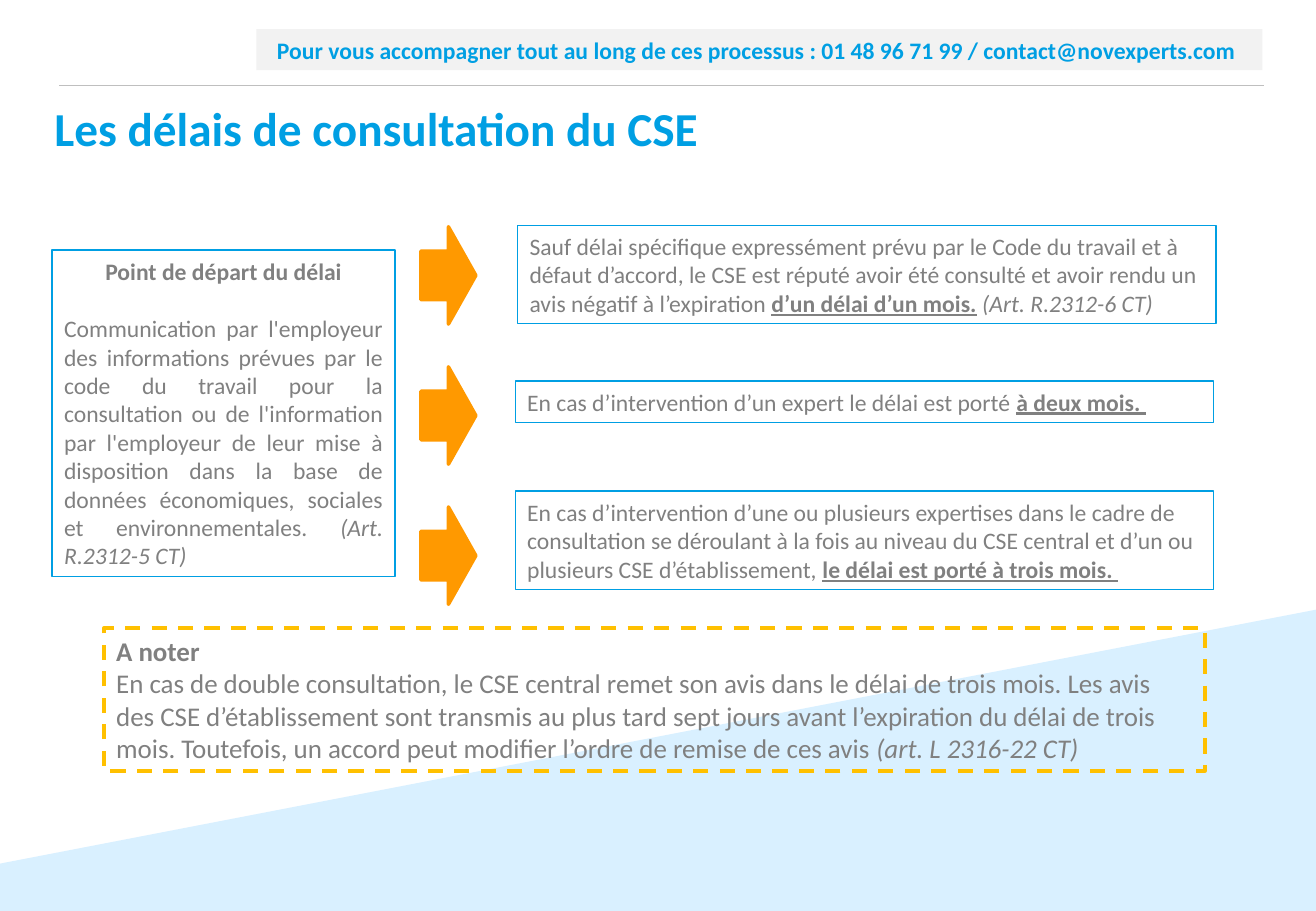
from dataclasses import dataclass

from lxml import etree
from pptx import Presentation
from pptx.dml.color import RGBColor
from pptx.enum.dml import MSO_LINE
from pptx.enum.shapes import MSO_CONNECTOR, MSO_SHAPE
from pptx.enum.text import MSO_ANCHOR, PP_ALIGN
from pptx.oxml.ns import qn
from pptx.util import Cm, Pt

RECTANGLE, RIGHT_ARROW = MSO_SHAPE.RECTANGLE, MSO_SHAPE.RIGHT_ARROW
STRAIGHT = MSO_CONNECTOR.STRAIGHT
DASH = MSO_LINE.DASH
TOP, MIDDLE = MSO_ANCHOR.TOP, MSO_ANCHOR.MIDDLE
LEFT, CENTER, JUSTIFY = PP_ALIGN.LEFT, PP_ALIGN.CENTER, PP_ALIGN.JUSTIFY

WIDTH, HEIGHT = 27.51, 19.05


@dataclass(frozen=True)
class Theme:
    """Colours, font and type sizes of the slide."""
    font: str = "Calibri"
    blue: str = "009FE3"
    pale_blue: str = "D9F0FF"
    orange: str = "FF9900"
    gold: str = "FFC000"
    grey: str = "808080"
    light_grey: str = "F2F2F2"
    rule_grey: str = "BFBFBF"
    white: str = "FFFFFF"
    title: int = 28
    note: int = 16
    body: int = 14


@dataclass(frozen=True)
class Run:
    """A stretch of text with its own emphasis."""
    text: str
    bold: bool = False
    italic: bool = False
    underline: bool = False


class SlideBuilder:
    """Draws styled elements on one slide."""

    def __init__(self, slide, theme):
        self.slide = slide
        self.theme = theme

    def paint(self, shape, fill=None, line=None, line_width=0.75):
        """Set fill and outline, without shadow."""
        shape.shadow.inherit = False
        if fill:
            shape.fill.solid()
            shape.fill.fore_color.rgb = RGBColor.from_string(fill)
        else:
            shape.fill.background()
        if line:
            shape.line.color.rgb = RGBColor.from_string(line)
            shape.line.width = Pt(line_width)
        else:
            shape.line.fill.background()

    def rule(self, left, right, top):
        """Draw a thin horizontal line."""
        connector = self.slide.shapes.add_connector(
            STRAIGHT, Cm(left), Cm(top), Cm(right), Cm(top))
        connector.line.color.rgb = RGBColor.from_string(self.theme.rule_grey)
        connector.line.width = Pt(0.5)
        properties = connector._element.find(qn("p:spPr"))
        etree.SubElement(properties, qn("a:effectLst"))

    def polygon(self, points, fill):
        """Draw a filled closed outline."""
        start, *others = [(Cm(x), Cm(y)) for x, y in points]
        builder = self.slide.shapes.build_freeform(*start)
        builder.add_line_segments(others, close=True)
        self.paint(builder.convert_to_shape(), fill)

    def shape(self, kind, left, top, width, height, **style):
        """Draw a preset shape."""
        shape = self.slide.shapes.add_shape(
            kind, Cm(left), Cm(top), Cm(width), Cm(height))
        self.paint(shape, **style)
        return shape

    def set_text(self, frame, paragraphs, size, color, anchor=MIDDLE):
        """Fill a text frame from (alignment, runs) pairs."""
        frame.word_wrap = True
        frame.vertical_anchor = anchor
        for index, (alignment, runs) in enumerate(paragraphs):
            paragraph = frame.paragraphs[0] if index == 0 else frame.add_paragraph()
            paragraph.alignment = alignment
            paragraph.font.name = self.theme.font
            paragraph.font.size = Pt(size)
            paragraph.font.color.rgb = RGBColor.from_string(color)
            for part in runs:
                run = paragraph.add_run()
                run.text = part.text
                run.font.bold = part.bold
                run.font.italic = part.italic
                run.font.underline = part.underline

    def box(self, bounds, paragraphs, size=None, color=None, **style):
        """Draw a rectangle with text."""
        shape = self.shape(RECTANGLE, *bounds, **style)
        self.set_text(shape.text_frame, paragraphs,
                      size or self.theme.body, color or self.theme.grey)
        return shape

    def title(self, bounds, text):
        """Set the slide title."""
        frame = self.slide.shapes.add_textbox(*map(Cm, bounds)).text_frame
        frame.margin_left = frame.margin_right = 0
        frame.margin_top = frame.margin_bottom = 0
        self.set_text(frame, [(LEFT, [Run(text, bold=True)])],
                      self.theme.title, self.theme.blue, TOP)


def main():
    """Build and save the slide."""
    theme = Theme()
    presentation = Presentation()
    presentation.slide_width, presentation.slide_height = Cm(WIDTH), Cm(HEIGHT)
    slide = presentation.slides.add_slide(presentation.slide_layouts[6])
    builder = SlideBuilder(slide, theme)

    builder.rule(1.24, 26.42, 1.78)
    builder.polygon([(0, 18.06), (0, HEIGHT), (WIDTH, HEIGHT), (WIDTH, 12.75)],
                    theme.pale_blue)
    builder.box((5.36, 0.61, 21.03, 0.86), [(CENTER, [Run(
        "Pour vous accompagner tout au long de ces processus : "
        "01 48 96 71 99 / contact@novexperts.com ", bold=True)])],
        color=theme.blue, fill=theme.light_grey)
    builder.title((1.14, 2.08, 22.71, 2.01), "Les délais de consultation du CSE")

    start = builder.box((1.09, 5.23, 7.17, 6.83), [
        (CENTER, [Run("Point de départ du délai", bold=True)]),
        (JUSTIFY, [
            Run("Communication par l'employeur des informations prévues par "
                "le code du travail pour la consultation ou de l'information "
                "par l'employeur de leur mise à disposition dans la base de "
                "données économiques, sociales et environnementales. "),
            Run("(Art. R.2312-5 CT)", italic=True)]),
    ], fill=theme.white, line=theme.blue)
    start.text_frame.paragraphs[0].space_after = Pt(17)

    delays = [
        (10.82, 4.71, 2.06, [
            Run("Sauf délai spécifique expressément prévu par le Code du travail "
                "et à défaut d’accord, le CSE est réputé avoir été consulté et "
                "avoir rendu un avis négatif à l’expiration "),
            Run("d’un délai d’un mois.", bold=True, underline=True),
            Run(" "),
            Run("(Art. R.2312-6 CT)", italic=True)]),
        (10.77, 7.97, 0.86, [
            Run("En cas d’intervention d’un expert le délai est porté "),
            Run("à deux mois. ", bold=True, underline=True)]),
        (10.77, 10.27, 2.06, [
            Run("En cas d’intervention d’une ou plusieurs expertises dans le "
                "cadre de consultation se déroulant à la fois au niveau du CSE "
                "central et d’un ou plusieurs CSE d’établissement, "),
            Run("le délai est porté à trois mois. ", bold=True, underline=True)]),
    ]
    for index, (left, top, height, runs) in enumerate(delays):
        builder.shape(RIGHT_ARROW, 8.8, 4.74 + 2.93 * index, 1.15, 2.04,
                      fill=theme.orange, line=theme.orange, line_width=2)
        builder.box((left, top, 14.6, height), [(LEFT, runs)], line=theme.blue)

    note = builder.box((2.18, 13.13, 23.01, 2.99), [
        (LEFT, [Run("A noter", bold=True)]),
        (LEFT, [
            Run("En cas de double consultation, le CSE central remet son avis "
                "dans le délai de trois mois. Les avis des CSE d’établissement "
                "sont transmis au plus tard sept jours avant l’expiration du "
                "délai de trois mois. Toutefois, un accord peut modifier "
                "l’ordre de remise de ces avis "),
            Run("(art. L 2316-22 CT)", italic=True)]),
    ], size=theme.note, line=theme.gold, line_width=2.25)
    note.line.dash_style = DASH

    presentation.save("out.pptx")


if __name__ == "__main__":
    main()
